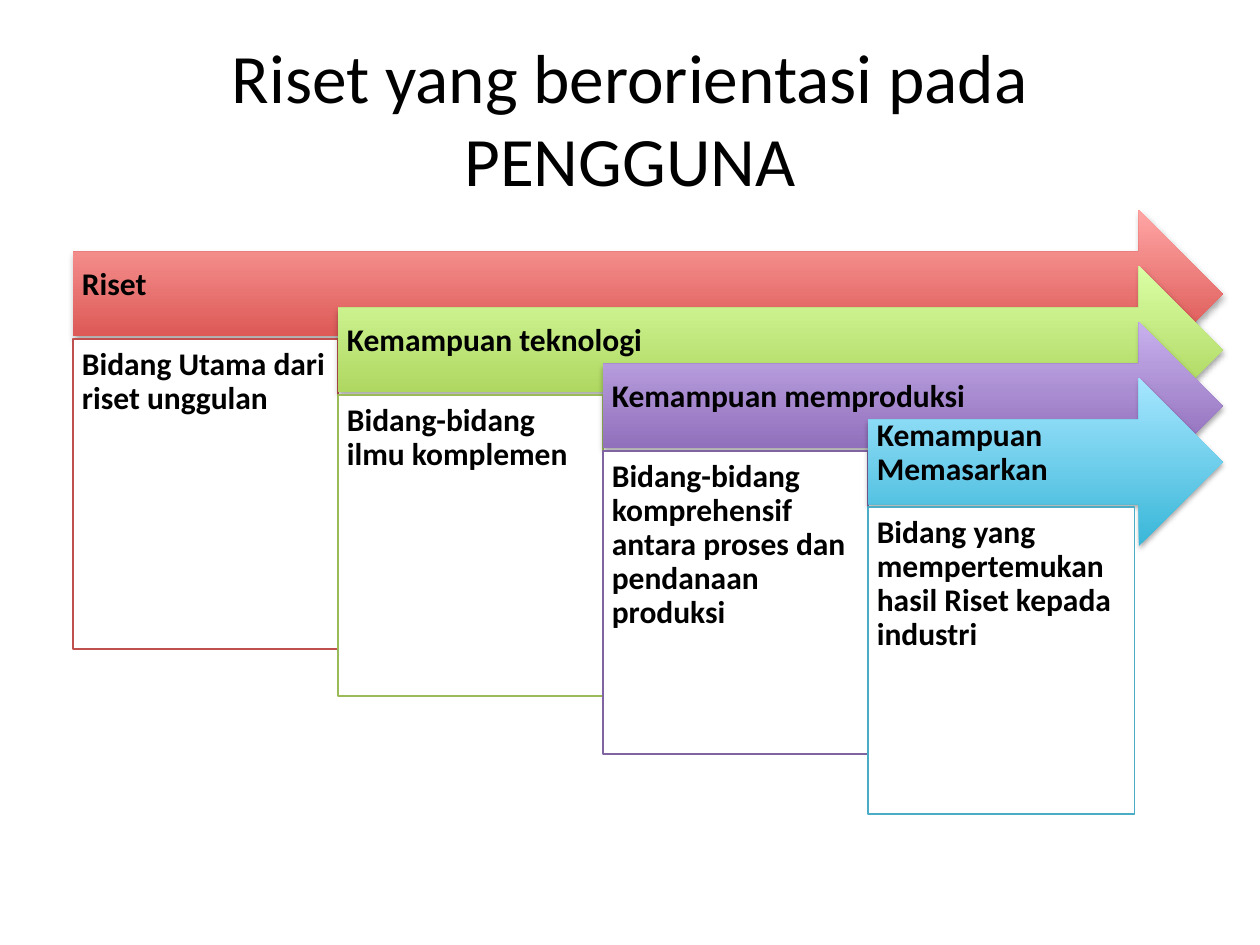
"""Build a slide of four staggered arrows, each with a description panel."""
from lxml import etree
from pptx import Presentation
from pptx.dml.color import RGBColor
from pptx.enum.shapes import MSO_SHAPE
from pptx.enum.text import MSO_ANCHOR, PP_ALIGN
from pptx.oxml.ns import qn
from pptx.util import Pt

PX = 914400 // 126
ARROW, PANEL = MSO_SHAPE.RIGHT_ARROW, MSO_SHAPE.RECTANGLE
TOP, MIDDLE = MSO_ANCHOR.TOP, MSO_ANCHOR.MIDDLE
LEFT, CENTER = PP_ALIGN.LEFT, PP_ALIGN.CENTER

STAGES = [
    ("Riset", "Bidang Utama dari riset unggulan",
     "D1403C", "FFA6A5", "C0504D", 265, 310),
    ("Kemampuan teknologi", "Bidang-bidang ilmu komplemen",
     "A0CA4A", "DAFFA5", "9BBB59", 265, 301),
    ("Kemampuan memproduksi",
     "Bidang-bidang komprehensif antara proses dan pendanaan produksi",
     "7F5BAB", "C8B0ED", "8064A2", 265, 303),
    ("Kemampuan Memasarkan",
     "Bidang yang mempertemukan hasil Riset kepada industri",
     "39B7D8", "A7E6FF", "4BACC6", 267, 307),
]
START_X, STEP_X, ARROW_END = 73, 265, 1223
ARROW_Y, PANEL_Y, STEP_Y, ARROW_HEIGHT = 210, 339, 56, 168


def color(value):
    return RGBColor.from_string(value)


def write(shape, text, size, anchor, align, insets, bold=False, spacing=1.0):
    frame = shape.text_frame
    frame.word_wrap = True
    frame.vertical_anchor = anchor
    frame.margin_left, frame.margin_top, frame.margin_right, frame.margin_bottom = (
        inset * PX for inset in insets)
    paragraph = frame.paragraphs[0]
    paragraph.alignment = align
    paragraph.line_spacing = spacing
    run = paragraph.add_run()
    run.text = text
    run.font.name = "Calibri"
    run.font.size = Pt(size)
    run.font.bold = bold
    run.font.color.rgb = color("000000")


prs = Presentation()
prs.slide_width, prs.slide_height = 1260 * PX, 945 * PX
slide = prs.slides.add_slide(prs.slide_layouts[6])

title = slide.shapes.add_textbox(63 * PX, 38 * PX, 1134 * PX, 158 * PX)
write(title, "Riset yang berorientasi pada PENGGUNA", 39.6, MIDDLE, CENTER,
      (13, 6, 13, 6))

for index, (stage, field, dark, light, border, width, height) in enumerate(STAGES):
    x = START_X + index * STEP_X
    drop = index * STEP_Y

    arrow = slide.shapes.add_shape(
        ARROW, x * PX, (ARROW_Y + drop) * PX, (ARROW_END - x) * PX, ARROW_HEIGHT * PX)
    arrow.fill.gradient()
    arrow.fill.gradient_angle = 90
    for stop, shade in zip(arrow.fill.gradient_stops, (dark, light)):
        stop.color.rgb = color(shade)
    arrow.line.fill.background()
    arrow.shadow.inherit = False
    effects = arrow.element.spPr.find(qn("a:effectLst"))
    shadow = etree.SubElement(effects, qn("a:outerShdw"), blurRad="40000",
                              dist="23000", dir="5400000", rotWithShape="0")
    black = etree.SubElement(shadow, qn("a:srgbClr"), val="000000")
    etree.SubElement(black, qn("a:alpha"), val="35000")
    write(arrow, stage, 18, MIDDLE, LEFT, (9, 9, 35, 26), True, 0.9)

    panel = slide.shapes.add_shape(
        PANEL, x * PX, (PANEL_Y + drop) * PX, width * PX, height * PX)
    panel.fill.solid()
    panel.fill.fore_color.rgb = color("FFFFFF")
    panel.line.color.rgb = color(border)
    panel.line.width = Pt(0.75)
    panel.shadow.inherit = False
    write(panel, field, 18, TOP, LEFT, (9, 9, 9, 9), True, 0.9)

prs.save("out.pptx")
